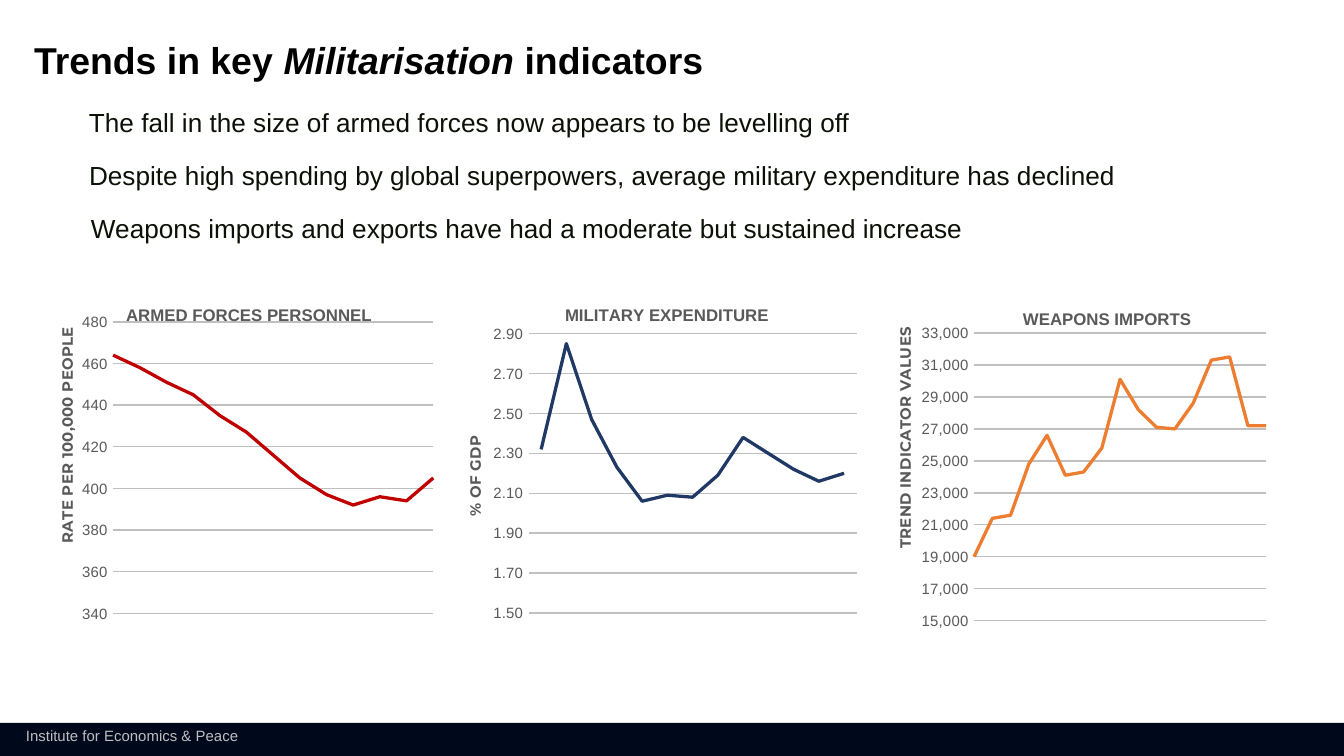
import pptx
import pptx.util
import pptx.chart.data
import pptx.dml.color
import pptx.enum.chart
import pptx.enum.shapes
import pptx.enum.text
import pptx.oxml
import pptx.oxml.ns

SCALE = 914400 / 134.4  # EMU in one px
HEX = {"black": "000000", "ink": "0B1107", "navy": "00081C", "pale": "BFBFBF",
       "grey": "595959", "red": "C00000", "blue": "203864", "orange": "ED7D31"}
Pt = pptx.util.Pt
qn = pptx.oxml.ns.qn


def px(n):
    return pptx.util.Emu(round(n * SCALE))


def rgb(name):
    return pptx.dml.color.RGBColor.from_string(HEX[name])


def style(font, size, color, face="Arial", bold=False):
    font.size, font.name, font.bold = Pt(size), face, bold
    font.color.rgb = rgb(color)


def add_run(para, text, *look, **more):
    run = para.add_run()
    run.text = text
    style(run.font, *look, **more)
    return run


def set_pads(frame, side, top):
    frame.margin_left = frame.margin_right = px(side)
    frame.margin_top = frame.margin_bottom = px(top)


def add_text(slide, box, text, size, color, wrap=True):
    frame = slide.shapes.add_textbox(*map(px, box)).text_frame
    frame.word_wrap = wrap
    set_pads(frame, 11, 5)
    add_run(frame.paragraphs[0], text, size, color)


def add_title(slide, box):
    title = slide.shapes.title
    title.left, title.top, title.width, title.height = map(px, box)
    frame = title.text_frame
    set_pads(frame, 0, 0)
    frame.vertical_anchor = pptx.enum.text.MSO_ANCHOR.MIDDLE
    para = frame.paragraphs[0]
    para.alignment = pptx.enum.text.PP_ALIGN.LEFT
    para.line_spacing = 0.9
    for text, slant in (("Trends in key ", False), ("Militarisation ", True),
                        ("indicators", False)):
        add_run(para, text, 20, "black", bold=True).font.italic = slant


def add_footer(slide, box):
    left, top, width, height = box
    bar = slide.shapes.add_shape(pptx.enum.shapes.MSO_SHAPE.RECTANGLE, *map(px, box))
    bar.shadow.inherit = False
    bar.fill.solid()
    bar.fill.fore_color.rgb = rgb("navy")
    bar.line.fill.background()
    add_text(slide, (left + 15, top - 1, 242, height), "Institute for Economics & Peace",
             8, "pale", wrap=False)


def set_place(node, after, inner=False, **parts):
    """Give a chart part a manual layout, in fractions of the chart."""
    for old in node.findall(qn("c:layout")):
        node.remove(old)
    tags = '<c:layoutTarget val="inner"/>' if inner else ""
    tags += "".join(f'<c:{key}Mode val="edge"/>' for key in "xy")
    tags += "".join(f'<c:{key} val="{val:.4f}"/>' for key, val in parts.items())
    node.insert(after, pptx.oxml.parse_xml(
        f'<c:layout {pptx.oxml.ns.nsdecls("c")}><c:manualLayout>{tags}'
        "</c:manualLayout></c:layout>"))


def add_label(title, text, size, face, box, spot):
    left, top, width, height = box
    add_run(title.text_frame.paragraphs[0], text, size, "grey", face=face, bold=True)
    set_place(title._element, 1, x=(spot[0] - left) / width, y=(spot[1] - top) / height)


def add_trend(slide, box, name, unit, color, start, vals, scale, form, plot,
              head, side, edge):
    data = pptx.chart.data.CategoryChartData(number_format=form)
    data.categories = [str(start + i) for i in range(len(vals))]
    data.add_series("Series 1", vals)
    kind = pptx.enum.chart.XL_CHART_TYPE.LINE
    chart = slide.shapes.add_chart(kind, *map(px, box), data).chart
    style(chart.font, 10, "black", face="Calibri")
    chart.has_legend = False
    chart.has_title = True
    add_label(chart.chart_title, name, 9, "Arial", box, head)

    # Line
    chart.plots[0].vary_by_categories = False
    line = chart.plots[0].series[0]
    line.smooth = False
    line.format.line.color.rgb = rgb(color)
    line.format.line.width = Pt(1.75)

    # Axes
    none = pptx.enum.chart.XL_TICK_MARK.NONE
    cat, val = chart.category_axis, chart.value_axis
    for axis in (cat, val):
        axis.major_tick_mark = axis.minor_tick_mark = none
        style(axis.tick_labels.font, 8, "grey")
    cat.tick_label_position = pptx.enum.chart.XL_TICK_LABEL_POSITION.NONE
    val.has_major_gridlines = True
    for rule in (cat.format.line, val.major_gridlines.format.line):
        rule.color.rgb = rgb("pale")
        rule.width = Pt(0.75)
    val.format.line.fill.background()
    node = val._element
    for old in node.findall(qn("c:crossBetween")):
        node.remove(old)
    cross = "midCat" if edge else "between"
    node.find(qn("c:crosses")).addnext(pptx.oxml.parse_xml(
        f'<c:crossBetween {pptx.oxml.ns.nsdecls("c")} val="{cross}"/>'))
    val.minimum_scale, val.maximum_scale, val.major_unit = scale
    val.tick_labels.number_format = form
    val.tick_labels.number_format_is_linked = False
    val.has_title = True
    frame = val.axis_title.text_frame
    frame._txBody.bodyPr.set("rot", "-5400000")
    frame._txBody.bodyPr.set("vert", "horz")
    add_label(val.axis_title, unit, 8, "Montserrat", box, side)
    area = chart._chartSpace.chart.plotArea
    set_place(area, 0, inner=True, **dict(zip("xywh", plot)))


def main():
    deck = pptx.Presentation()
    deck.slide_width, deck.slide_height = px(1344), px(756)
    slide = deck.slides.add_slide(deck.slide_layouts[5])
    add_footer(slide, (0, 723, 1344, 33))
    add_title(slide, (34, 42, 1089, 40))

    # Key points
    points = ((78, 832, "The fall in the size of armed forces now appears to be levelling off"),
              (78, 1103, "Despite high spending by global superpowers, average military "
                         "expenditure has declined"),
              (80, 914, "Weapons imports and exports have had a moderate but sustained increase"))
    for i, (left, width, text) in enumerate(points):
        add_text(slide, (left, 101 + 53 * i, width, 42), text, 14, "ink")

    # Charts: name, unit, colour, first year, values, scale, format, plot, label spots
    trends = (
        ("ARMED FORCES PERSONNEL", "RATE PER 100,000 PEOPLE", "red", 2008,
         (464, 458, 451, 445, 435, 427, 416, 405, 397, 392, 396, 394, 405),
         (340, 480, 20), "#,##0", (0.187, 0.113, 0.757, 0.786), (123, 301), (53, 324), True),
        ("MILITARY EXPENDITURE", "% OF GDP", "blue", 2008,
         (2.32, 2.85, 2.47, 2.23, 2.06, 2.09, 2.08, 2.19, 2.38, 2.3, 2.22, 2.16, 2.2),
         (1.5, 3, 0.2), "0.00", (0.181, 0.091, 0.776, 0.807), (562, 301), (461, 433), False),
        ("WEAPONS IMPORTS", "TREND INDICATOR VALUES", "orange", 2003,
         (19000, 21400, 21600, 24800, 26600, 24100, 24300, 25800, 30100, 28200,
          27100, 27000, 28600, 31300, 31500, 27200, 27200),
         (15000, 33000, 2000), "#,##0", (0.246, 0.143, 0.691, 0.776), (1020, 305),
         (891, 324), True))
    for i, trend in enumerate(trends):
        add_trend(slide, (34 + 418 * i, 280, 423, 371), *trend)
    deck.save("out.pptx")


if __name__ == "__main__":
    main()
